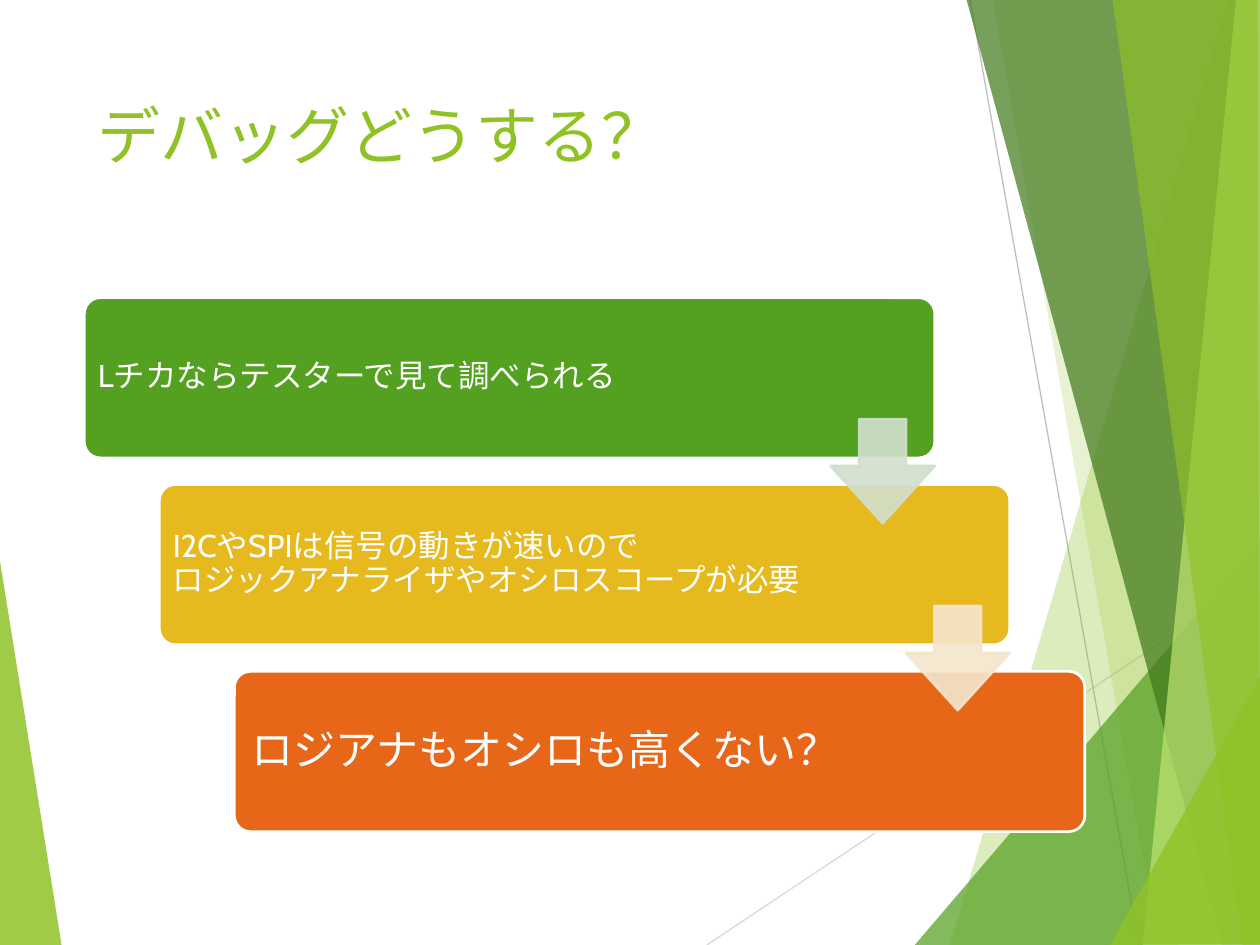
from collections import namedtuple

from lxml import etree
from pptx import Presentation
from pptx import util as u
from pptx.dml.color import RGBColor
from pptx.enum import shapes, text
from pptx.oxml.ns import qn

Box = namedtuple("Box", "x y w h")
FONT = "Cabin"
LINES = [((56.1, 100), (100.1, 60.93), "D9D9D9"), ((77, 0), (90.4, 100), "BFBFBF")]
FACETS = [
    ("90C226", 85, [(-0.1, 58.53), (4.9, 100.1), (-0.1, 100)]),
    ("90C226", 30, [(97.5, 0), (75.4, 100), (100.2, 100.1), (100.1, 0.1)]),
    ("90C226", 20, [(78.8, -0.1), (91.9, 100), (100.1, 100), (100.1, -0.1)]),
    ("54A021", 72, [(72.6, 100), (100, 57.2), (100.1, 100)]),
    ("3F7819", 70, [(76.7, -0.1), (97, 100), (100.1, 99.9), (100.1, -0.1)]),
    ("C0E474", 70, [(98.1, -0.1), (90.7, 100), (100.1, 100), (100, -0.1)]),
    ("90C226", 65, [(88.3, -0.1), (98.6, 100), (100, 100), (99.8, -0.1)]),
    ("90C226", 80, [(88.1, 100), (100.1, 71.33), (100.1, 99.9)]),
]
STEPS = [
    ("Lチカならテスターで見て調べられる", 18, 0.07, "54A021", "D1DFCD"),
    ("I2CやSPIは信号の動きが速いので\vロジックアナライザやオシロスコープが必要", 18, 0.07, "E6B91E", "F5E6CD"),
    ("ロジアナもオシロも高くない？", 24, 0.1, "E76618", None),
]


def within(box, x, y, w, h):
    """Return the part of a box given in percent of its size."""
    return Box(*(int(v) for v in (box.x + box.w * x / 100, box.y + box.h * y / 100,
                                  box.w * w / 100, box.h * h / 100)))


def assign(obj, **values):
    """Set attributes from a dict of format values."""
    for name, value in values.items():
        setattr(obj, name, value)


def paint(fmt, color, alpha=100):
    """Apply a solid colour with an opacity in percent to a fill."""
    fmt.solid()
    fmt.fore_color.rgb = RGBColor.from_string(color)
    if alpha < 100:
        clr = fmt._xPr.find(qn("a:solidFill"))[0]
        etree.SubElement(clr, qn("a:alpha")).set("val", str(alpha * 1000))


def style(sp, fill, alpha=100, line=None):
    """Give a shape its fill and outline without a shadow."""
    sp.shadow.inherit = False
    paint(sp.fill, fill, alpha)
    if line:
        sp.line.width = u.Pt(1.5)
        paint(sp.line.fill, line, alpha)
    else:
        sp.line.fill.background()


def write(sp, words, size, color, inset, anchor, spacing=1.0):
    """Write one left-aligned paragraph into a shape."""
    tf = sp.text_frame
    sides = ("margin_left", "margin_right", "margin_top", "margin_bottom")
    assign(tf, word_wrap=True, auto_size=text.MSO_AUTO_SIZE.NONE,
           vertical_anchor=anchor, **dict.fromkeys(sides, u.Inches(inset)))
    p = tf.paragraphs[0]
    assign(p, text=words, alignment=text.PP_ALIGN.LEFT, line_spacing=spacing)
    for r in p.runs:
        assign(r.font, name=FONT, size=u.Pt(size))
        r.font.color.rgb = RGBColor.from_string(color)


def add_decor(s, box):
    """Draw the thin lines and translucent facets at the edges."""
    def spot(point):
        return within(box, *point, 0, 0)[:2]

    for start, end, color in LINES:
        line = s.shapes.add_connector(shapes.MSO_CONNECTOR.STRAIGHT, *spot(start), *spot(end))
        line.line.width = u.Pt(0.75)
        paint(line.line.fill, color)
        etree.SubElement(line._element.spPr, qn("a:effectLst"))
    for color, alpha, points in FACETS:
        first, *rest = map(spot, points)
        fb = s.shapes.build_freeform(*first)
        fb.add_line_segments(rest)
        style(fb.convert_to_shape(), color, alpha)


def add_title(s, box, words):
    """Place the slide title."""
    sp = s.shapes.title
    assign(sp, left=box.x, top=box.y, width=box.w, height=box.h)
    write(sp, words, 36, "90C226", 0.1, text.MSO_ANCHOR.TOP)


def add_steps(s, box):
    """Draw the staircase of cards joined by down arrows."""
    wide, high = 85, 30
    gaps = len(STEPS) - 1
    dx, dy = (100 - wide) / gaps, (100 - high) / gaps
    cards = [within(box, i * dx, i * dy, wide, high) for i in range(len(STEPS))]
    for card, (words, size, inset, fill, _) in zip(cards, STEPS):
        sp = s.shapes.add_shape(shapes.MSO_SHAPE.ROUNDED_RECTANGLE, *card)
        sp.adjustments[0] = 0.1
        style(sp, fill, line="FFFFFF")
        write(sp, words, size, "FFFFFF", inset, text.MSO_ANCHOR.MIDDLE, 0.9)
    for card, below, (*_, tint) in zip(cards, cards[1:], STEPS):
        side = int(card.h * 0.65)
        middle = (card.y + card.h + below.y) // 2
        sp = s.shapes.add_shape(shapes.MSO_SHAPE.DOWN_ARROW, card.x + card.w - side,
                                middle - side // 2, side, side)
        sp.adjustments[0], sp.adjustments[1] = 0.45, 0.55
        style(sp, tint, 90, tint)


def main():
    """Build the slide and save it."""
    prs = Presentation()
    assign(prs, slide_width=u.Inches(10), slide_height=u.Inches(7.5))
    s = prs.slides.add_slide(prs.slide_layouts[5])
    page = Box(0, 0, prs.slide_width, prs.slide_height)
    add_decor(s, page)
    add_title(s, within(page, 6.7, 8.93, 69.4, 19.2), "デバッグどうする？")
    add_steps(s, within(page, 6.7, 31.5, 79.4, 56.5))
    prs.save("out.pptx")


if __name__ == "__main__":
    main()
